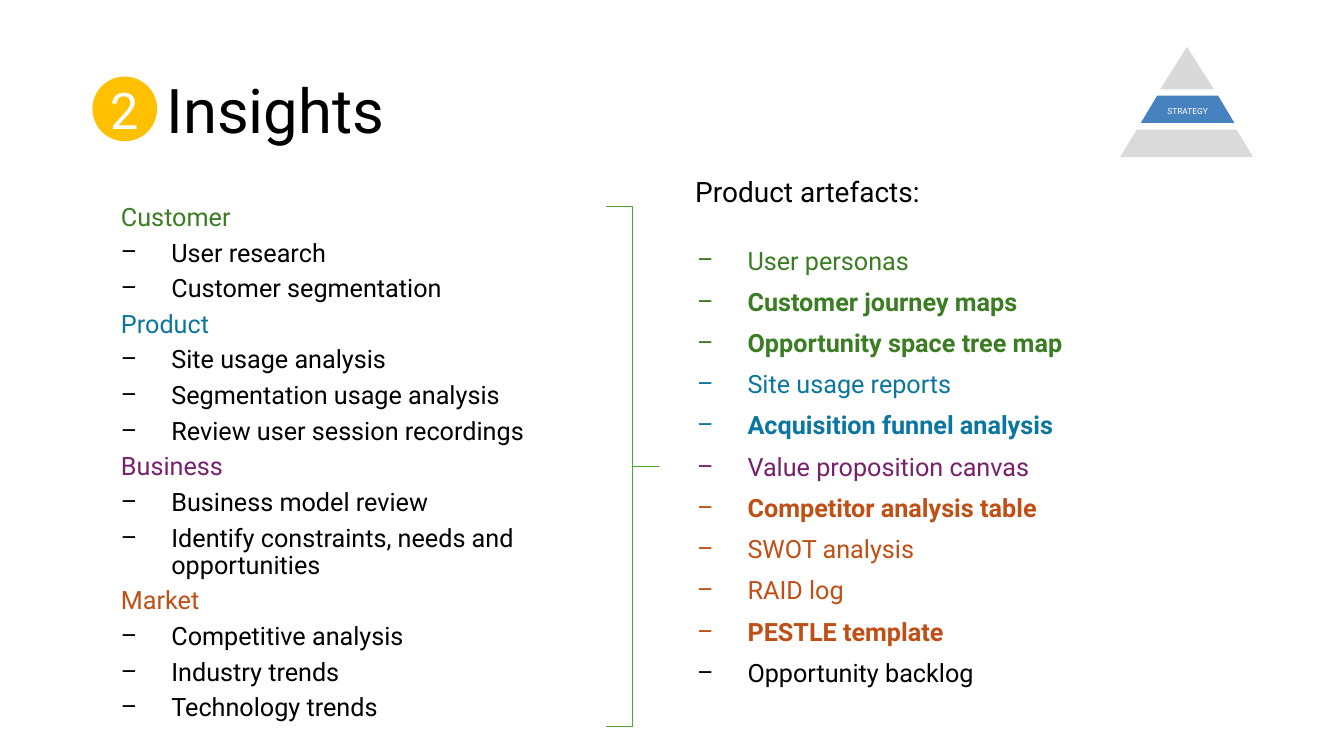
"""Build the Insights slide: research areas on the left, product artefacts on the right."""
from dataclasses import dataclass

from lxml import etree
from pptx import Presentation
from pptx.dml.color import RGBColor
from pptx.enum.shapes import MSO_SHAPE
from pptx.enum.text import MSO_ANCHOR, MSO_AUTO_SIZE, PP_ALIGN
from pptx.oxml.ns import qn
from pptx.util import Cm, Pt

ELLIPSE = MSO_SHAPE.OVAL
TRIANGLE = MSO_SHAPE.ISOSCELES_TRIANGLE
TRAPEZOID = MSO_SHAPE.TRAPEZOID
BRACE = MSO_SHAPE.RIGHT_BRACE
MIDDLE = MSO_ANCHOR.MIDDLE
NO_AUTOFIT = MSO_AUTO_SIZE.NONE
LEFT, CENTER = PP_ALIGN.LEFT, PP_ALIGN.CENTER

FONT = "Roboto"
TITLE_ONLY = 5
COLORS = {
    "black": "000000",
    "white": "FFFFFF",
    "badge": "FFC000",
    "top": "D9D9D9",
    "base": "DADADA",
    "active": "4682BE",
    "brace": "4EA72E",
    "customer": "3B7D23",
    "product": "0B76A0",
    "business": "78206E",
    "market": "C04F15",
}


@dataclass(frozen=True)
class Box:
    """Position and size in centimetres."""
    left: float
    top: float
    width: float
    height: float

    def lengths(self):
        """Return the four values as lengths."""
        return Cm(self.left), Cm(self.top), Cm(self.width), Cm(self.height)


@dataclass(frozen=True)
class Tier:
    """One level of the pyramid."""
    preset: int
    box: Box
    color: str
    slant: float | None = None
    label: str = ""


@dataclass(frozen=True)
class Area:
    """A research area with its activities."""
    name: str
    color: str
    activities: tuple[str, ...]


@dataclass(frozen=True)
class Artefact:
    """A product artefact in the colour of its area."""
    name: str
    color: str
    bold: bool = False


TIERS = (
    Tier(TRIANGLE, Box(29.24, 1.18, 1.35, 1.07), "top"),
    Tier(TRAPEZOID, Box(28.75, 2.41, 2.36, 0.69), "active", 0.6, "STRATEGY"),
    Tier(TRAPEZOID, Box(28.23, 3.27, 3.35, 0.69), "base", 0.6),
)
AREAS = (
    Area("Customer", "customer", ("User research", "Customer segmentation")),
    Area("Product", "product", ("Site usage analysis", "Segmentation usage analysis",
                                "Review user session recordings")),
    Area("Business", "business", ("Business model review",
                                  "Identify constraints, needs and opportunities")),
    Area("Market", "market", ("Competitive analysis", "Industry trends", "Technology trends")),
)
ARTEFACTS = (
    Artefact("User personas", "customer"),
    Artefact("Customer journey maps", "customer", True),
    Artefact("Opportunity space tree map", "customer", True),
    Artefact("Site usage reports", "product"),
    Artefact("Acquisition funnel analysis", "product", True),
    Artefact("Value proposition canvas", "business"),
    Artefact("Competitor analysis table", "market", True),
    Artefact("SWOT analysis", "market"),
    Artefact("RAID log", "market"),
    Artefact("PESTLE template", "market", True),
    Artefact("Opportunity backlog", "black"),
)


def rgb(name: str) -> RGBColor:
    """Look up a colour by name."""
    return RGBColor.from_string(COLORS[name])


def write(frame, text: str, *, size: float = 18, color: str = "black", bold: bool = False,
          align=LEFT, spacing: float = 0.9, before: float = 0, indent: float = 0,
          dash: bool = False) -> None:
    """Write a formatted paragraph, filling the empty first one before adding more."""
    first = frame.paragraphs[0]
    paragraph = frame.add_paragraph() if first.runs else first
    paragraph.alignment = align
    paragraph.line_spacing = spacing
    paragraph.space_before = Pt(before)
    properties = paragraph._p.get_or_add_pPr()
    properties.set("marL", str(Cm(indent)))
    properties.set("indent", str(Cm(-1.27 if dash else 0)))
    if dash:
        etree.SubElement(properties, qn("a:buFont"), typeface=FONT)
        etree.SubElement(properties, qn("a:buChar"), char="–")
    run = paragraph.add_run()
    run.text = text
    run.font.name = FONT
    run.font.size = Pt(size)
    run.font.bold = bold
    run.font.color.rgb = rgb(color)


def add_text_box(slide, box: Box):
    """Add a wrapping, middle-anchored text box and return its frame."""
    frame = slide.shapes.add_textbox(*box.lengths()).text_frame
    frame.word_wrap = True
    frame.vertical_anchor = MIDDLE
    return frame


def add_filled_shape(slide, preset: int, box: Box, color: str, label: str, size: float):
    """Add a borderless shape with an optional centred white label."""
    shape = slide.shapes.add_shape(preset, *box.lengths())
    shape.shadow.inherit = False
    shape.fill.solid()
    shape.fill.fore_color.rgb = rgb(color)
    shape.line.fill.background()
    if label:
        frame = shape.text_frame
        frame.margin_left = frame.margin_right = frame.margin_top = frame.margin_bottom = 0
        frame.word_wrap = False
        frame.vertical_anchor = MIDDLE
        write(frame, label, size=size, color="white", align=CENTER, spacing=1)
    return shape


def add_title(slide) -> None:
    """Place the title and its numbered badge."""
    title = slide.shapes.title
    title.left, title.top, title.width, title.height = Box(3.94, 1.02, 27.58, 3.68).lengths()
    title.text_frame.auto_size = NO_AUTOFIT
    title.text_frame.vertical_anchor = MIDDLE
    write(title.text_frame, "Insights", size=44)
    add_filled_shape(slide, ELLIPSE, Box(2.33, 1.93, 1.63, 1.63), "badge", "2", 36)


def add_pyramid(slide) -> None:
    """Draw the pyramid with the current tier highlighted."""
    for tier in TIERS:
        shape = add_filled_shape(slide, tier.preset, tier.box, tier.color, tier.label, 6)
        if tier.slant is not None:
            shape.adjustments[0] = tier.slant


def add_areas(slide) -> None:
    """List the research areas and their activities."""
    frame = add_text_box(slide, Box(2.75, 4.96, 12.85, 13.44))
    for area in AREAS:
        write(frame, area.name, color=area.color, before=6, indent=0.05)
        for activity in area.activities:
            write(frame, activity, before=6, indent=1.32, dash=True)


def add_brace(slide) -> None:
    """Join the two lists with a square brace."""
    brace = slide.shapes.add_shape(BRACE, *Box(15.28, 5.2, 1.32, 13.11).lengths())
    brace.shadow.inherit = False
    brace.adjustments[0] = 0
    brace.fill.background()
    brace.line.color.rgb = rgb("brace")
    brace.line.width = Pt(1)


def add_artefacts(slide) -> None:
    """List the product artefacts under their heading."""
    frame = add_text_box(slide, Box(17.27, 5.19, 15.01, 13.21))
    for artefact in ARTEFACTS:
        write(frame, artefact.name, color=artefact.color, bold=artefact.bold, before=10,
              indent=1.32, dash=True)
    heading = add_text_box(slide, Box(17.22, 4.42, 13.54, 0.97))
    write(heading, "Product artefacts:", size=20, spacing=0.8, before=5, indent=0.05)


def main() -> None:
    """Build and save the slide."""
    deck = Presentation()
    deck.slide_width, deck.slide_height = Cm(33.87), Cm(19.05)
    slide = deck.slides.add_slide(deck.slide_layouts[TITLE_ONLY])
    for add_part in (add_title, add_pyramid, add_areas, add_brace, add_artefacts):
        add_part(slide)
    deck.save("out.pptx")


if __name__ == "__main__":
    main()
